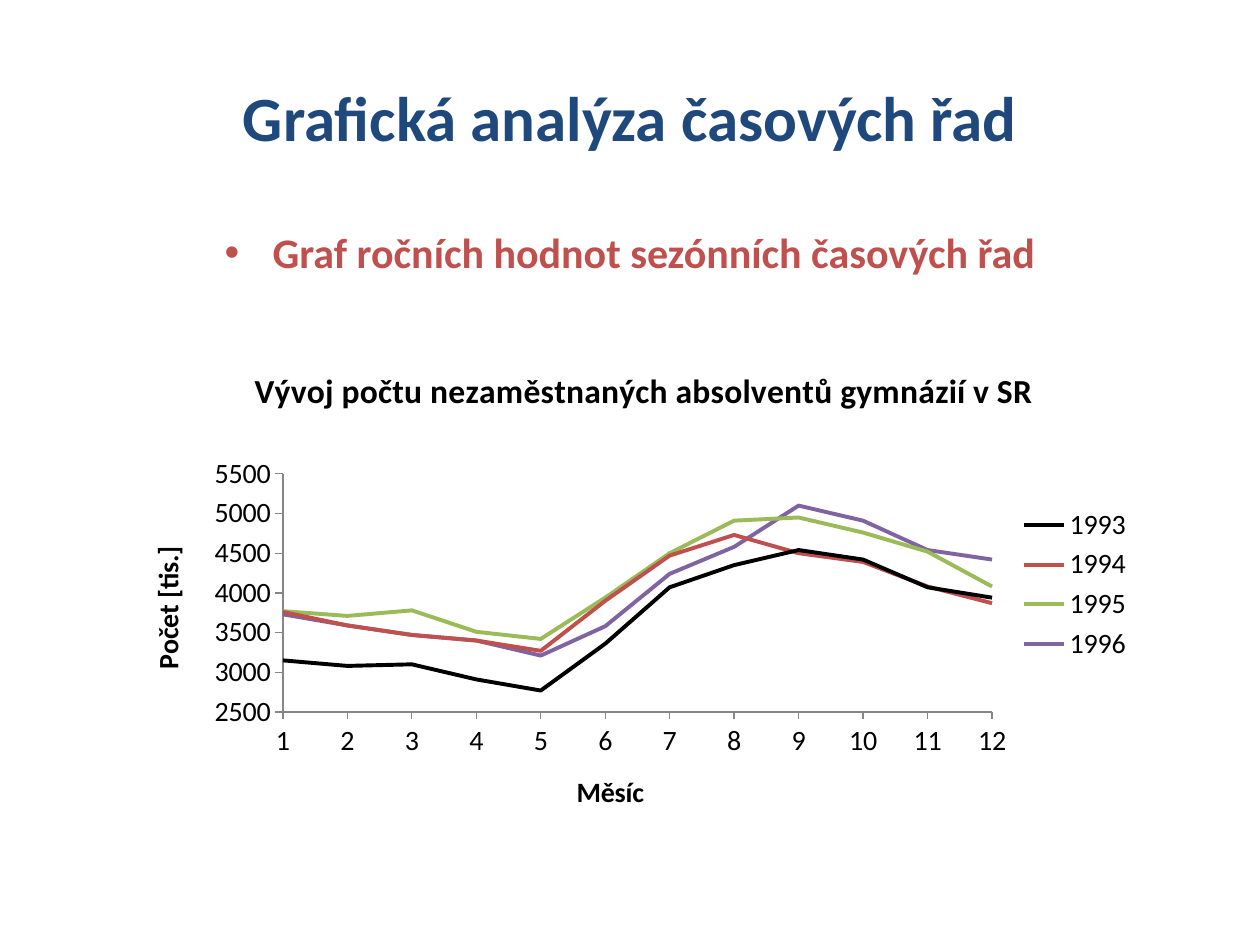
from lxml.etree import SubElement
from pptx import Presentation
from pptx.chart.data import XyChartData
from pptx.dml.color import RGBColor
from pptx.enum.chart import XL_CHART_TYPE, XL_LEGEND_POSITION, XL_TICK_MARK
from pptx.enum.text import MSO_ANCHOR, PP_ALIGN
from pptx.oxml.ns import qn
from pptx.util import Inches, Pt

FONT = "Calibri"
SERIES = {
    "1993": ("000000", [3150, 3080, 3100, 2910, 2770, 3360, 4070, 4350, 4540, 4420, 4070, 3940]),
    "1994": ("C0504D", [3760, 3590, 3470, 3400, 3270, 3900, 4470, 4730, 4500, 4390, 4080, 3870]),
    "1995": ("9BBB59", [3770, 3710, 3780, 3510, 3420, 3940, 4500, 4910, 4950, 4760, 4520, 4080]),
    "1996": ("8064A2", [3730, 3590, 3470, 3400, 3210, 3580, 4240, 4580, 5100, 4910, 4540, 4420]),
}
PLOT = {"x": 0.139, "y": 0.27, "w": 0.708, "h": 0.495}


def rgb(value):
    """Return the colour for a hex string."""
    return RGBColor.from_string(value)


def set_attrs(obj, values):
    """Set every attribute named in a dict."""
    for name, value in values.items():
        setattr(obj, name, value)


def format_font(font, size, color, bold=True):
    """Apply typeface, size, weight and colour."""
    set_attrs(font, {"name": FONT, "size": Pt(size), "bold": bold})
    font.color.rgb = rgb(color)


def place(sp, box):
    """Move a shape to a box given in inches."""
    for name, value in zip(("left", "top", "width", "height"), box):
        setattr(sp, name, Inches(value))


def write(tf, text, size, color):
    """Write one centred bold paragraph and return it."""
    p = tf.paragraphs[0]
    p.alignment = PP_ALIGN.CENTER
    r = p.add_run()
    r.text = text
    format_font(r.font, size, color)
    return p


def add_title(s, box, text):
    """Fill and place the title placeholder."""
    sp = s.shapes.title
    place(sp, box)
    sp.text_frame.vertical_anchor = MSO_ANCHOR.MIDDLE
    write(sp.text_frame, text, 36, "1F497D")


def add_bullet(s, box, text):
    """Add a centred bullet line."""
    tf = s.shapes.add_textbox(*map(Inches, box)).text_frame
    tf.word_wrap = True
    p = write(tf, text, 24, "C0504D")
    p.space_before = Pt(4.8)
    pPr = p._p.get_or_add_pPr()
    pPr.set("marL", str(Inches(0.38)))
    pPr.set("indent", str(Inches(-0.38)))
    SubElement(pPr, qn("a:buFont")).set("typeface", "Arial")
    SubElement(pPr, qn("a:buChar")).set("char", "•")


def add_caption(owner, text, size):
    """Give a chart or an axis its title."""
    owner.has_title = True
    tf = owner.chart_title.text_frame if hasattr(owner, "chart_title") else owner.axis_title.text_frame
    write(tf, text, size, "000000")


def format_axis(axis, title, scale):
    """Format one value axis."""
    set_attrs(axis, scale)
    set_attrs(axis, {"has_major_gridlines": False, "major_tick_mark": XL_TICK_MARK.OUTSIDE,
                     "minor_tick_mark": XL_TICK_MARK.NONE})
    set_attrs(axis.tick_labels, {"number_format": "General", "number_format_is_linked": False})
    axis.format.line.color.rgb = rgb("868686")
    axis.format.line.width = Pt(0.75)
    add_caption(axis, title, 16)


def set_plot_layout(chart):
    """Fix the inner plot area as fractions of the chart."""
    area = chart._chartSpace.chart.plotArea
    for old in area.findall(qn("c:layout")):
        area.remove(old)
    layout = area.makeelement(qn("c:layout"))
    area.insert(0, layout)
    manual = SubElement(layout, qn("c:manualLayout"))
    values = {"layoutTarget": "inner", "xMode": "edge", "yMode": "edge", **PLOT}
    for name, value in values.items():
        SubElement(manual, qn(f"c:{name}")).set("val", str(value))


def add_line_chart(s, box):
    """Add the scatter chart with one line per year."""
    data = XyChartData()
    for year, (_, values) in SERIES.items():
        series = data.add_series(year)
        for month, value in enumerate(values, 1):
            series.add_data_point(month, value)
    chart = s.shapes.add_chart(
        XL_CHART_TYPE.XY_SCATTER_LINES_NO_MARKERS, *map(Inches, box), data).chart
    format_font(chart.font, 16, "000000", False)
    add_caption(chart, "Vývoj počtu nezaměstnaných absolventů gymnázií v SR", 19.2)
    format_axis(chart.category_axis, "Měsíc",
                {"minimum_scale": 1, "maximum_scale": 12, "major_unit": 1})
    format_axis(chart.value_axis, "Počet [tis.]",
                {"minimum_scale": 2500, "maximum_scale": 5500, "major_unit": 500})
    chart.has_legend = True
    set_attrs(chart.legend, {"position": XL_LEGEND_POSITION.RIGHT, "include_in_layout": False})
    chart.plots[0].vary_by_categories = False
    for series, (color, _) in zip(chart.plots[0].series, SERIES.values()):
        series.smooth = False
        series.format.line.color.rgb = rgb(color)
        series.format.line.width = Pt(2.25)
    set_plot_layout(chart)


def main():
    """Build and save the slide."""
    prs = Presentation()
    set_attrs(prs, {"slide_width": Inches(10), "slide_height": Inches(7.5)})
    s = prs.slides.add_slide(prs.slide_layouts[5])
    add_title(s, (0.5, 0.3, 9, 1.25), "Grafická analýza časových řad")
    add_bullet(s, (0.5, 1.75, 9, 4.95), "Graf ročních hodnot sezónních časových řad")
    add_line_chart(s, (1.14, 2.73, 7.95, 3.82))
    prs.save("out.pptx")


if __name__ == "__main__":
    main()
